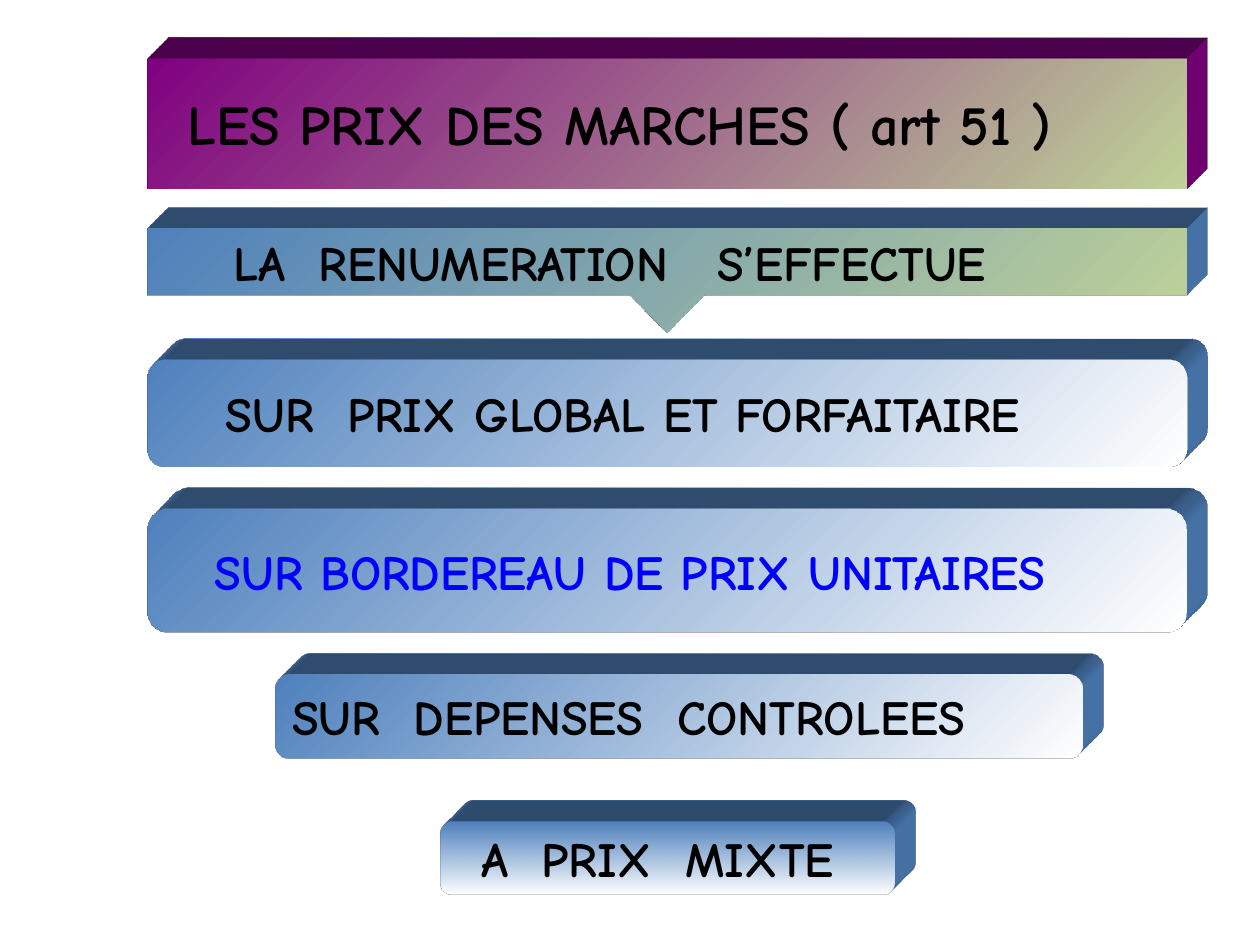
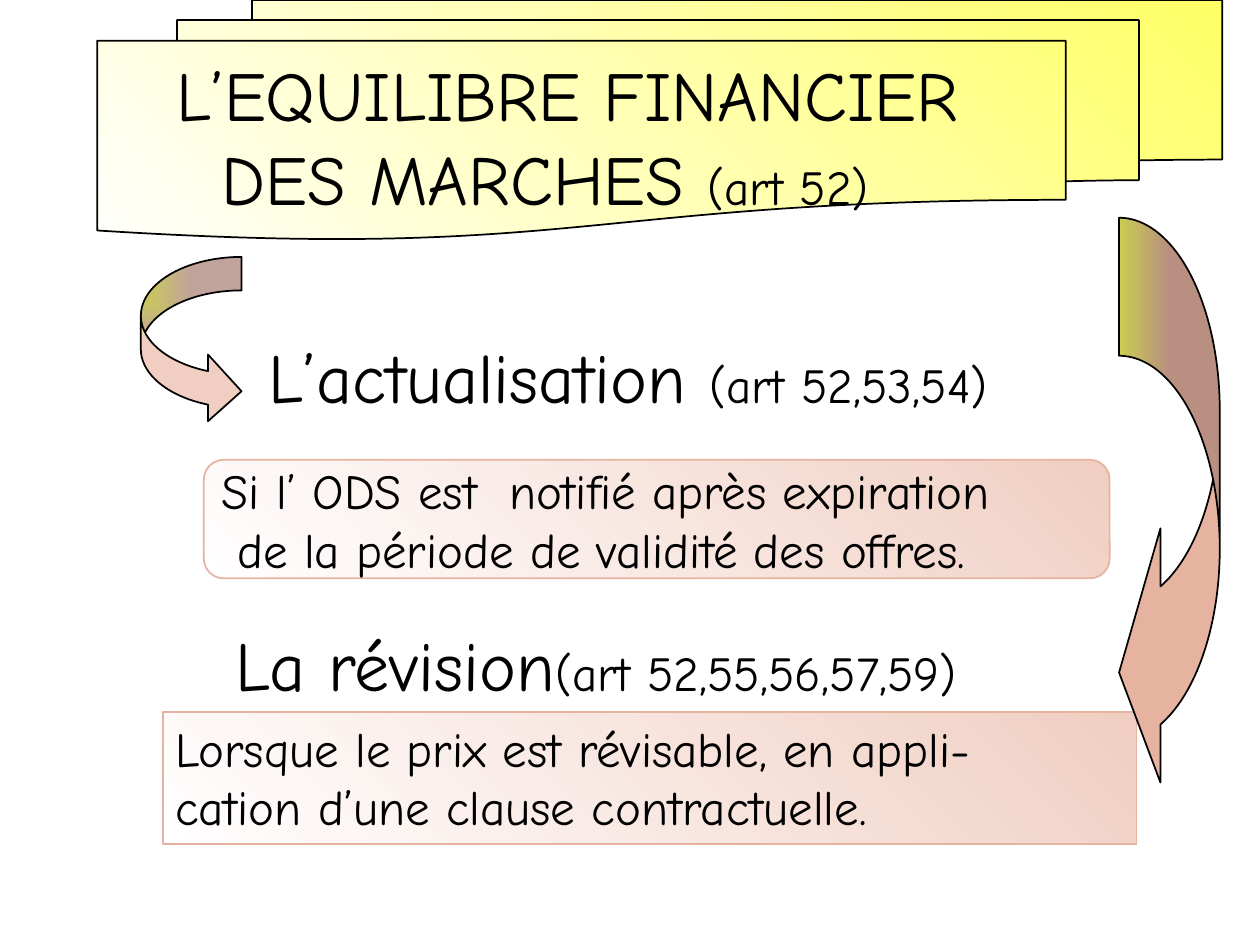
from dataclasses import dataclass
from typing import Optional

from lxml.etree import SubElement
from pptx import Presentation
from pptx.dml.color import RGBColor
from pptx.enum.shapes import MSO_SHAPE as SHAPE
from pptx.enum.text import MSO_ANCHOR as ANCHOR, PP_ALIGN as ALIGN
from pptx.oxml import parse_xml
from pptx.oxml.ns import nsdecls, qn
from pptx.util import Cm, Pt

BLACK = RGBColor(0x00, 0x00, 0x00)
WHITE = RGBColor(0xFF, 0xFF, 0xFF)
PURPLE = RGBColor(0x80, 0x00, 0x80)
GREEN = RGBColor(0xBF, 0xD2, 0x98)
STEEL = RGBColor(0x4F, 0x81, 0xBD)
BLUE = RGBColor(0x00, 0x00, 0xFF)
CREAM = RGBColor(0xFF, 0xFF, 0xFC)
YELLOW = RGBColor(0xFF, 0xFF, 0x66)
PINK = RGBColor(0xF0, 0xCE, 0xC2)
SALMON = RGBColor(0xE7, 0xB3, 0xA1)

FONT = "Comic Neue"
TITLE_SIZE, BODY_SIZE = 40, 28
DIAGONAL_DOWN, DIAGONAL_UP, DOWN = 315, 45, 270
SPACE = 9.2


@dataclass(frozen=True)
class Run:
    """A piece of text with its size and extra letter spacing in points."""
    text: str
    size: float = BODY_SIZE
    spacing: float = 0


@dataclass(frozen=True)
class Line:
    """A paragraph with a left indent in centimetres."""
    runs: tuple[Run, ...]
    indent: float = 0


@dataclass(frozen=True)
class Block:
    """A shape, or a plain text box when it has no kind; lengths in centimetres."""
    kind: Optional[SHAPE]
    box: tuple[float, float, float, float]
    lines: tuple[Line, ...] = ()
    colors: tuple[RGBColor, ...] = ()
    angle: Optional[int] = DIAGONAL_UP
    border: Optional[RGBColor] = None
    adjust: tuple[float, ...] = ()
    anchor: ANCHOR = ANCHOR.MIDDLE
    text_color: RGBColor = BLACK
    bold: bool = False
    extruded: bool = False


GAP, WIDE_GAP = Run(" ", spacing=SPACE), Run(" ", spacing=2 * SPACE)


def banner(kind: SHAPE, box: tuple, runs: tuple, indent: float = 0,
           colors: tuple = (STEEL, WHITE), angle: int = DIAGONAL_DOWN, **extra) -> Block:
    """Describe an extruded banner holding one bold line."""
    return Block(kind, box, (Line(runs, indent),), colors, angle,
                 bold=True, extruded=True, **extra)


def heading(box: tuple, title: str, articles: str, indent: float = 0) -> Block:
    """Describe a text box with a large title and smaller article numbers."""
    line = Line((Run(title, TITLE_SIZE), Run(articles)), indent)
    return Block(None, box, (line,), anchor=ANCHOR.TOP)


LEFT, WIDTH = 2.97, 20.96
ROUNDED = SHAPE.FLOWCHART_ALTERNATE_PROCESS

PRICES = (
    banner(SHAPE.FLOWCHART_PROCESS, (LEFT, 1.17, WIDTH, 2.64),
           (Run("LES PRIX DES MARCHES ( art 51 )", 32),), 0.56, (PURPLE, GREEN)),
    banner(SHAPE.DOWN_ARROW_CALLOUT, (LEFT, 4.6, WIDTH, 2.11),
           (Run("LA"), GAP, Run("RENUMERATION"), WIDE_GAP, Run("S’EFFECTUE")),
           1.48, (STEEL, GREEN), adjust=(0.463, 0.353, 0.36, 0.64)),
    banner(ROUNDED, (LEFT, 7.24, WIDTH, 2.16),
           (Run("SUR"), GAP, Run("PRIX GLOBAL ET FORFAITAIRE")), 1.23),
    banner(ROUNDED, (LEFT, 10.26, WIDTH, 2.49),
           (Run("SUR BORDEREAU DE PRIX UNITAIRES"),), 0.99, text_color=BLUE),
    banner(ROUNDED, (5.56, 13.59, 16.26, 1.7),
           (Run("SUR"), GAP, Run("DEPENSES"), GAP, Run("CONTROLEES"))),
    banner(ROUNDED, (8.89, 16.56, 9.14, 1.47),
           (Run("A"), GAP, Run("PRIX"), GAP, Run("MIXTE")), 0.49, angle=DOWN),
)

BALANCE = (
    Block(SHAPE.FLOWCHART_MULTIDOCUMENT, (1.96, 0, 22.68, 4.83),
          (Line((Run("L’EQUILIBRE FINANCIER", TITLE_SIZE),), 1.35),
           Line((Run("DES MARCHES ", TITLE_SIZE), Run("(art 52)")), 2.25)),
          (CREAM, YELLOW), border=BLACK),
    Block(SHAPE.CURVED_RIGHT_ARROW, (2.84, 5.18, 2.03, 3.38), colors=(YELLOW, PINK),
          angle=None, border=BLACK, adjust=(0.333, 0.662, 0.333)),
    heading((4.5, 12.4, 17.4, 1.96), "La révision", "(art 52,55,56,57,59)"),
    heading((4.72, 6.6, 20.37, 1.96), "L’actualisation ", "(art 52,53,54)", 0.45),
    Block(ROUNDED, (4.11, 9.27, 18.26, 2.39),
          (Line((Run("Si l’ ODS est"), GAP, Run("notifié après expiration"))),
           Line((Run("de la période de validité des offres."),), 0.31)),
          (WHITE, PINK), border=SALMON),
    Block(SHAPE.RECTANGLE, (3.28, 14.35, 19.63, 2.67),
          (Line((Run("Lorsque le prix est révisable, en appli-"),)),
           Line((Run("cation d’une clause contractuelle."),))),
          (WHITE, PINK), border=SALMON, anchor=ANCHOR.TOP),
    Block(SHAPE.CURVED_LEFT_ARROW, (22.56, 4.39, 2.03, 11.73), colors=(YELLOW, SALMON),
          angle=None, border=BLACK, adjust=(1.371, 2.524, 0.411)),
)


def paint(sp, block: Block) -> None:
    """Apply the gradient, from the top left corner when there is no angle."""
    sp.fill.gradient()
    for stop, color in zip(sp.fill.gradient_stops, block.colors):
        stop.color.rgb = color
    if block.angle is not None:
        sp.fill.gradient_angle = block.angle
        return
    grad = sp._element.spPr.find(qn("a:gradFill"))
    grad.remove(grad.find(qn("a:lin")))
    route = SubElement(grad, qn("a:path"), {"path": "rect"})
    SubElement(route, qn("a:fillToRect"), {"r": "100000", "b": "100000"})


def extrude(sp, color: RGBColor) -> None:
    """Give a shape a solid depth towards the top right."""
    ns = nsdecls("a")
    for xml in (
        f'<a:scene3d {ns}><a:camera prst="legacyObliqueTopRight"/>'
        '<a:lightRig rig="legacyFlat3" dir="b"/></a:scene3d>',
        f'<a:sp3d {ns} extrusionH="430200" prstMaterial="legacyMatte">'
        '<a:bevelT w="13500" h="13500" prst="angle"/>'
        '<a:bevelB w="13500" h="13500" prst="angle"/>'
        f'<a:extrusionClr><a:srgbClr val="{color}"/></a:extrusionClr></a:sp3d>',
    ):
        sp._element.spPr.append(parse_xml(xml))


def write(sp, block: Block) -> None:
    """Fill a shape with the lines of its block."""
    tf = sp.text_frame
    tf.word_wrap = True
    tf.vertical_anchor = block.anchor
    for i, line in enumerate(block.lines):
        p = tf.add_paragraph() if i else tf.paragraphs[0]
        p.alignment = ALIGN.LEFT
        p._p.get_or_add_pPr().set("marL", str(Cm(line.indent)))
        for run in line.runs:
            r = p.add_run()
            r.text = run.text
            style = {"name": FONT, "size": Pt(run.size), "bold": block.bold}
            for key, value in style.items():
                setattr(r.font, key, value)
            r.font.color.rgb = block.text_color
            if run.spacing:
                r._r.get_or_add_rPr().set("spc", str(round(run.spacing * 100)))


def draw(s, block: Block) -> None:
    """Draw one block on a slide."""
    box = [Cm(length) for length in block.box]
    if block.kind is None:
        write(s.shapes.add_textbox(*box), block)
        return
    sp = s.shapes.add_shape(block.kind, *box)
    sp.shadow.inherit = False
    for i, value in enumerate(block.adjust):
        sp.adjustments[i] = value
    paint(sp, block)
    if block.border is None:
        sp.line.fill.background()
    else:
        sp.line.color.rgb = block.border
        sp.line.width = Pt(1)
    if block.extruded:
        extrude(sp, block.colors[0])
    if block.lines:
        write(sp, block)


def main() -> None:
    """Build the two slides and save them."""
    prs = Presentation()
    prs.slide_width, prs.slide_height = Cm(25.4), Cm(19.05)
    for blocks in (PRICES, BALANCE):
        s = prs.slides.add_slide(prs.slide_layouts[6])
        for block in blocks:
            draw(s, block)
    prs.save("out.pptx")


if __name__ == "__main__":
    main()
